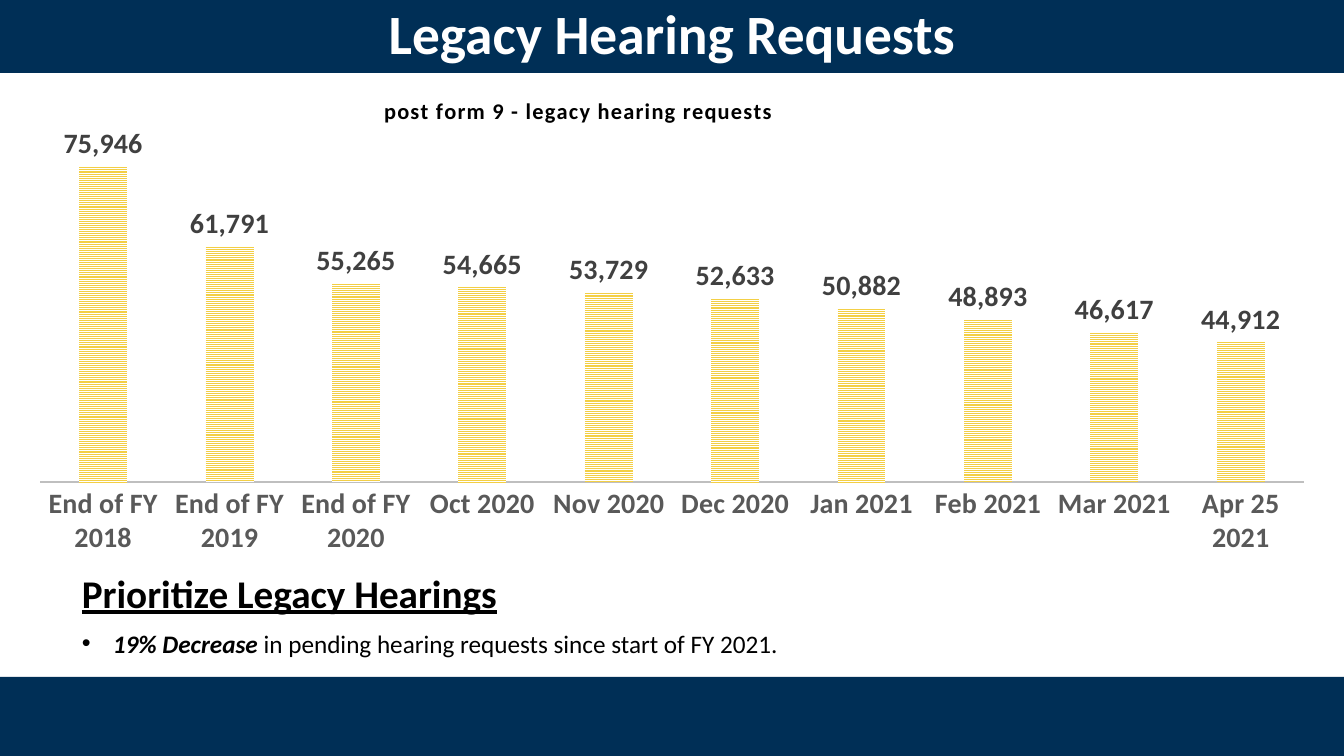
from dataclasses import dataclass

from lxml import etree
from pptx import Presentation
from pptx import util as u
from pptx.chart import data as chart_data
from pptx.dml import color
from pptx.enum import chart as chart_enum
from pptx.enum import dml, shapes, text
from pptx.oxml import ns, parse_xml

PX_PER_INCH = 100.8
FONT = "Calibri"
NAVY, GOLD, WHITE, BLACK = "002F56", "F3CF45", "FFFFFF", "000000"
COUNT_FORMAT = '_(* #,##0_);_(* \\(#,##0\\);_(* "-"??_);_('
REQUESTS = {
    "End of FY 2018": 75946,
    "End of FY 2019": 61791,
    "End of FY 2020": 55265,
    "Oct 2020": 54665,
    "Nov 2020": 53729,
    "Dec 2020": 52633,
    "Jan 2021": 50882,
    "Feb 2021": 48893,
    "Mar 2021": 46617,
    "Apr 25 2021": 44912,
}


@dataclass(frozen=True)
class Area:
    left: int
    top: int
    width: int
    height: int

    def emu(self) -> tuple:
        return tuple(px(side) for side in (self.left, self.top, self.width, self.height))


@dataclass(frozen=True)
class Span:
    words: str
    size: float
    ink: str = BLACK
    bold: bool = True
    italic: bool = False
    underline: bool = False


@dataclass(frozen=True)
class TextBlock:
    area: Area
    spans: tuple
    align: text.PP_ALIGN = text.PP_ALIGN.LEFT
    anchor: text.MSO_ANCHOR = text.MSO_ANCHOR.TOP
    bullet_indent: int = 0


HEADER = Area(0, -8, 1344, 81)
FOOTER = Area(0, 677, 1344, 81)
CHART = Area(13, 70, 1317, 495)
PLOT = Area(40, 142, 1264, 340)
CHART_TITLE = Area(380, 92, 463, 26)

TEXT_BLOCKS = (
    TextBlock(HEADER, (Span("Legacy Hearing Requests", 39.6, WHITE),),
              text.PP_ALIGN.CENTER, text.MSO_ANCHOR.MIDDLE),
    TextBlock(Area(72, 564, 1154, 57),
              (Span("Prioritize Legacy Hearings", 28, underline=True),)),
    TextBlock(Area(72, 623, 926, 102),
              (Span("19% Decrease ", 18, italic=True),
               Span("in pending hearing requests since start of FY 2021.", 18, bold=False)),
              bullet_indent=31),
)


def px(length: int) -> int:
    return round(length * u.Inches(1) / PX_PER_INCH)


def rgb(code: str) -> color.RGBColor:
    return color.RGBColor.from_string(code)


def style_font(font, size: float, ink: str, bold: bool = True) -> None:
    font.name = FONT
    font.size = u.Pt(size)
    font.bold = bold
    font.color.rgb = rgb(ink)


def add_band(page, area: Area) -> None:
    band = page.shapes.add_shape(shapes.MSO_SHAPE.RECTANGLE, *area.emu())
    band.shadow.inherit = False
    band.fill.solid()
    band.fill.fore_color.rgb = rgb(NAVY)
    band.line.fill.background()


def add_bullet(para, indent: int) -> None:
    properties = para._p.get_or_add_pPr()
    properties.set("marL", str(px(indent)))
    properties.set("indent", str(-px(indent)))
    etree.SubElement(properties, ns.qn("a:buFont"), typeface="Arial")
    etree.SubElement(properties, ns.qn("a:buChar"), char="•")


def add_text(page, block: TextBlock) -> None:
    frame = page.shapes.add_textbox(*block.area.emu()).text_frame
    frame.word_wrap = True
    frame.vertical_anchor = block.anchor
    para = frame.paragraphs[0]
    para.alignment = block.align
    if block.bullet_indent:
        add_bullet(para, block.bullet_indent)
    for span in block.spans:
        run = para.add_run()
        run.text = span.words
        style_font(run.font, span.size, span.ink, span.bold)
        run.font.italic = span.italic
        run.font.underline = span.underline


def manual_layout(area: Area, sized: bool):
    """Place a chart part at an area of the page, as fractions of the chart."""
    parts = {"xMode": "edge", "yMode": "edge",
             "x": round((area.left - CHART.left) / CHART.width, 4),
             "y": round((area.top - CHART.top) / CHART.height, 4)}
    if sized:
        parts = {"layoutTarget": "inner", **parts,
                 "w": round(area.width / CHART.width, 4),
                 "h": round(area.height / CHART.height, 4)}
    body = "".join(f'<c:{name} val="{value}"/>' for name, value in parts.items())
    return parse_xml(f'<c:layout {ns.nsdecls("c")}><c:manualLayout>{body}'
                     "</c:manualLayout></c:layout>")


def set_layout(parent, layout, position: int) -> None:
    for old in parent.findall(ns.qn("c:layout")):
        parent.remove(old)
    parent.insert(position, layout)


def add_requests_chart(page) -> None:
    table = chart_data.CategoryChartData(number_format=COUNT_FORMAT)
    table.categories = list(REQUESTS)
    table.add_series("Series 1", list(REQUESTS.values()))
    chart = page.shapes.add_chart(
        chart_enum.XL_CHART_TYPE.COLUMN_CLUSTERED, *CHART.emu(), table).chart
    chart.has_legend = False
    style_font(chart.font, 10, BLACK, bold=False)

    title = chart.chart_title
    para = title.text_frame.paragraphs[0]
    para.text = "post form 9 - legacy hearing requests"
    run = para.runs[0]
    style_font(run.font, 16, BLACK)
    run.font._element.set("spc", "100")
    set_layout(title._element, manual_layout(CHART_TITLE, sized=False), 1)
    title.include_in_layout = False

    months = chart.category_axis
    months.major_tick_mark = chart_enum.XL_TICK_MARK.NONE
    style_font(months.tick_labels.font, 20, "595959")
    months.format.line.color.rgb = rgb("BFBFBF")
    months.format.line.width = u.Pt(1.5)

    counts = chart.value_axis
    counts.minimum_scale, counts.maximum_scale = 20000, 80000
    counts.has_major_gridlines = False
    counts.visible = False

    plot = chart.plots[0]
    plot.gap_width, plot.overlap = 164, -22
    plot.vary_by_categories = False
    set_layout(plot._element.getparent(), manual_layout(PLOT, sized=True), 0)
    series = plot.series[0]
    fill = series.format.fill
    fill.patterned()
    fill.pattern = dml.MSO_PATTERN.NARROW_HORIZONTAL
    fill.fore_color.rgb = rgb(GOLD)
    fill.back_color.rgb = rgb(WHITE)

    labels = series.data_labels
    labels.show_value = True
    labels.position = chart_enum.XL_LABEL_POSITION.OUTSIDE_END
    labels.number_format = COUNT_FORMAT
    labels.number_format_is_linked = False
    style_font(labels.font, 20, "404040")


def main() -> None:
    deck = Presentation()
    deck.slide_width, deck.slide_height = px(1344), px(756)
    page = deck.slides.add_slide(deck.slide_layouts[6])
    for band in (FOOTER, HEADER):
        add_band(page, band)
    for block in TEXT_BLOCKS:
        add_text(page, block)
    add_requests_chart(page)
    deck.save("out.pptx")


if __name__ == "__main__":
    main()
